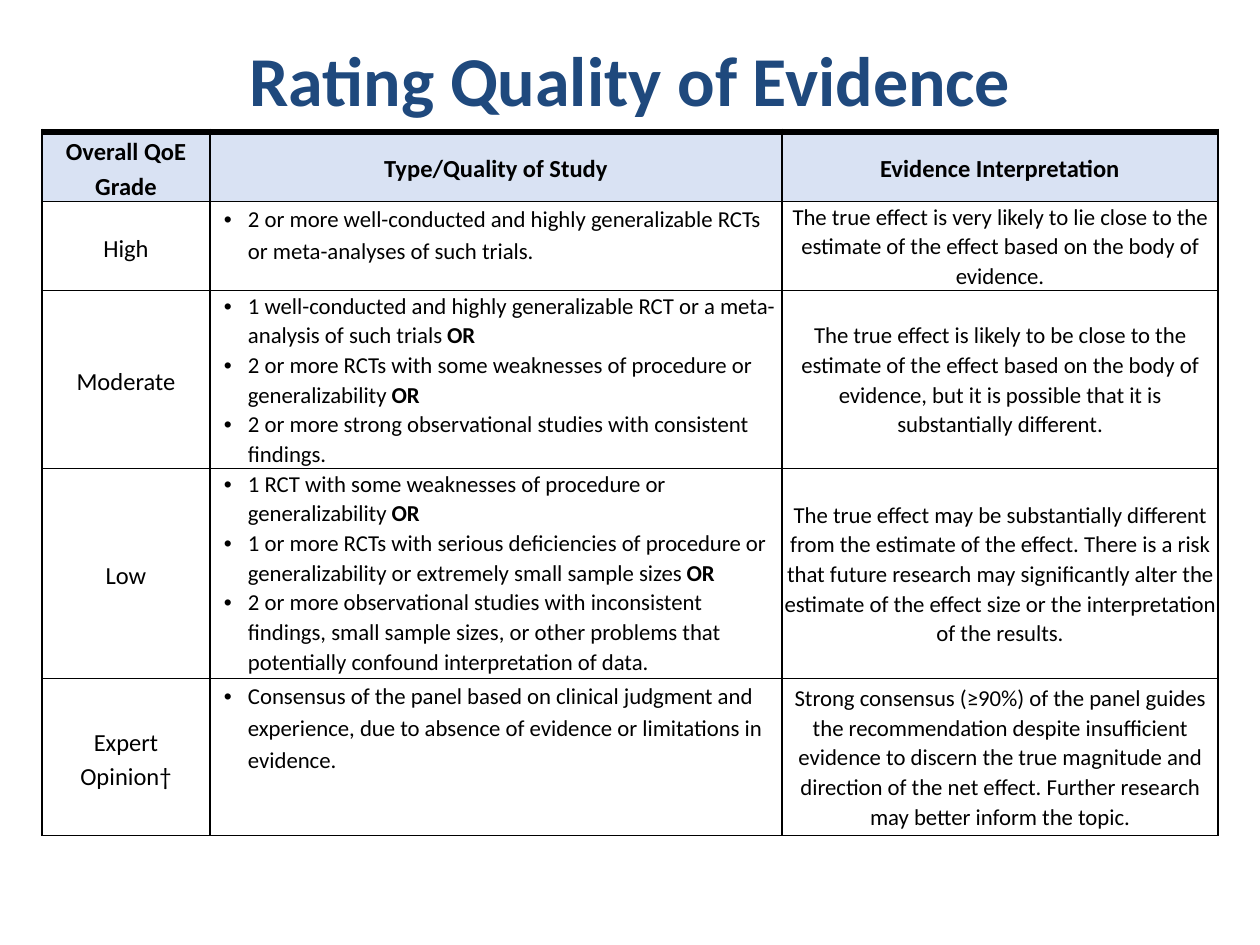
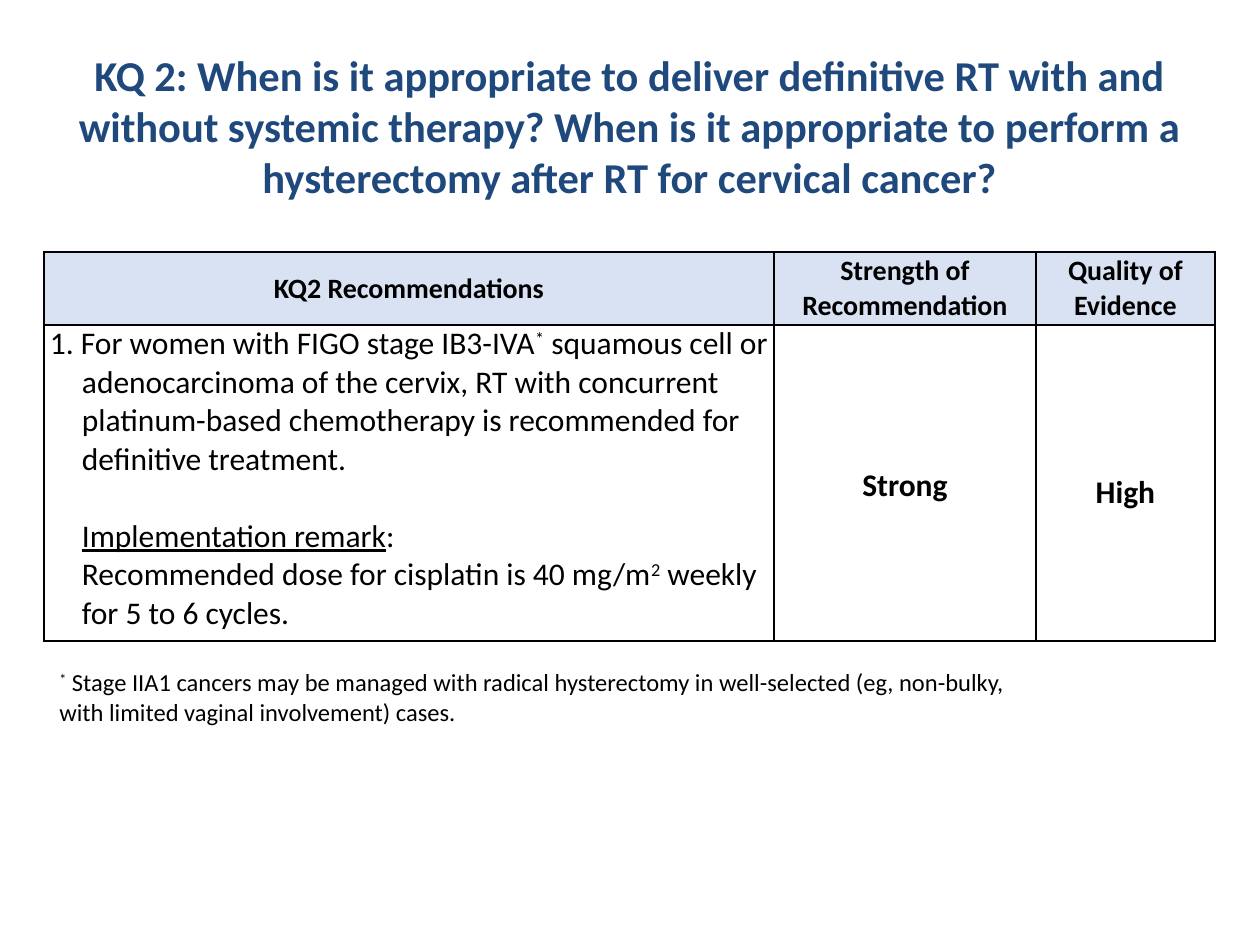
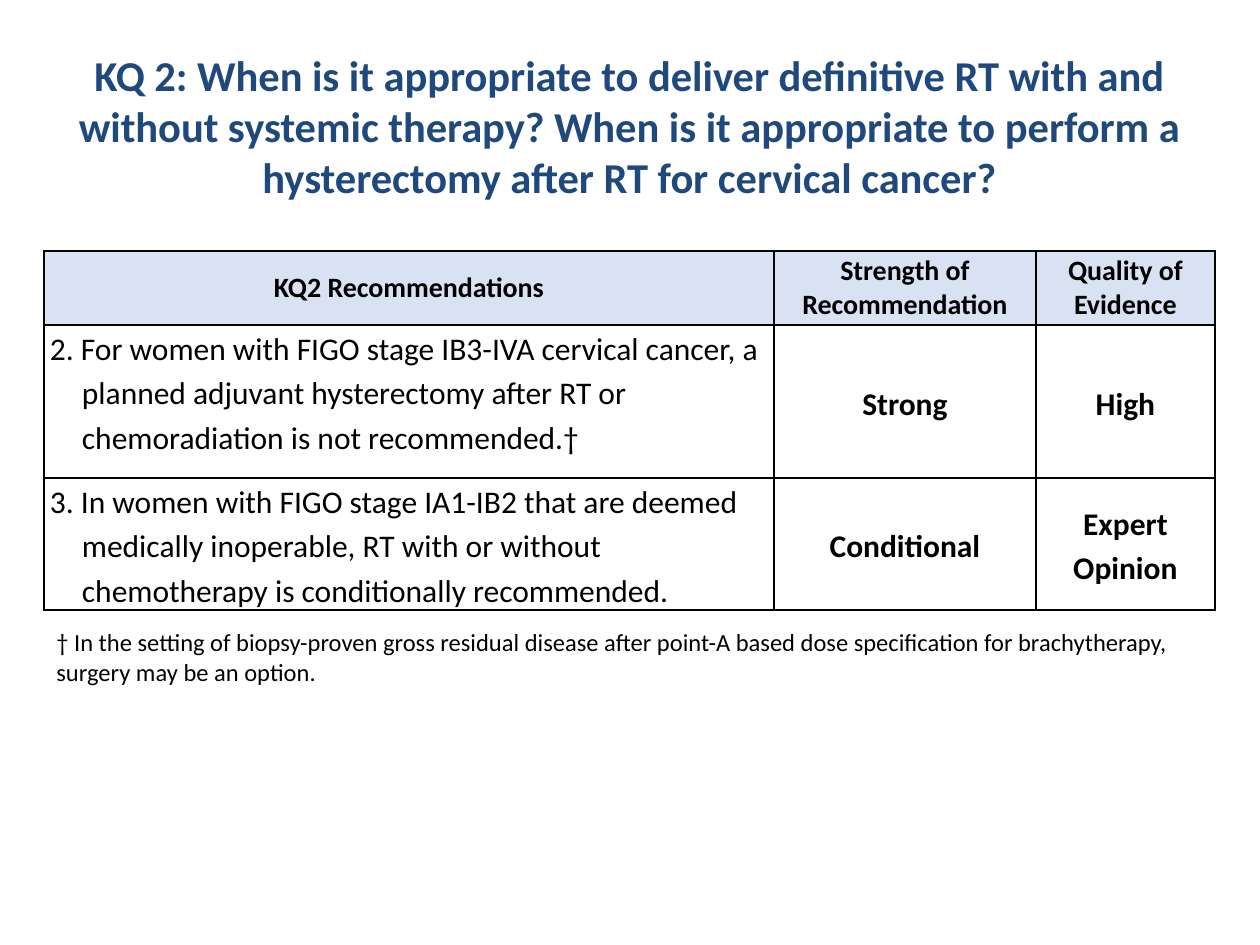
import pptx
import pptx.dml.color
import pptx.enum.text
import pptx.oxml
import pptx.oxml.ns
import pptx.util

PX = 914400 // 126
FONT = "Calibri"
NAVY, BLACK, WHITE, HEADER_BLUE = "1F497D", "000000", "FFFFFF", "D9E2F3"
CENTER = pptx.enum.text.PP_ALIGN.CENTER
TOP = pptx.enum.text.MSO_ANCHOR.TOP
MIDDLE = pptx.enum.text.MSO_ANCHOR.MIDDLE
FIT_TEXT = pptx.enum.text.MSO_AUTO_SIZE.SHAPE_TO_FIT_TEXT

BOLD, UNDERLINE, SUPERSCRIPT = {"bold": True}, {"underline": True}, {"baseline": 30000}
OR = ("OR", BOLD)

# Paragraph formats
CENTERED = {"alignment": CENTER}
LOOSE = {"alignment": CENTER, "line_spacing": 1.15}
SNUG = {"alignment": CENTER, "line_spacing": 1.07}
WIDE = {"alignment": CENTER, "line_spacing": 1.5}
BULLET = {"marL": 38, "indent": -24, "bullet": "•"}
LOOSE_BULLET = {**BULLET, "line_spacing": 1.15}
SNUG_BULLET = {**BULLET, "line_spacing": 1.07}
NUMBERED = {"marL": 32, "indent": -32}
LOOSE_NUMBERED = {**NUMBERED, "line_spacing": 1.15}
REMARK = {"marL": 32}
REMARK_HEADING = {**REMARK, "space_before": pptx.util.Pt(22)}
NOTE = {"space_after": pptx.util.Pt(6)}

# Cell styles; insets run left, top, right, bottom
NO_INSET, GRADE_INSET, HEADER_INSET, KQ_INSET = (0, 0, 0, 0), (9, 1, 9, 0), (9, 0, 9, 0), (6, 0, 6, 0)
GRADE_HEADER = {"size": 14, "bold": True, "fill": HEADER_BLUE, "inset": GRADE_INSET, "top_line": 4.5}
STUDY_HEADER = {**GRADE_HEADER, "inset": NO_INSET}
GRADE = {"size": 14, "inset": GRADE_INSET}
STUDY = {"size": 13, "inset": NO_INSET, "anchor": TOP}
INTERPRETATION = {"size": 13, "inset": NO_INSET}
KQ_HEADER = {"size": 16, "bold": True, "fill": HEADER_BLUE, "inset": HEADER_INSET}
RECOMMENDATION = {"size": 18, "inset": KQ_INSET, "anchor": TOP}
RATING = {"size": 18, "bold": True, "inset": KQ_INSET}

KQ_TITLE = ("KQ 2: When is it appropriate to deliver definitive RT with and without systemic "
            "therapy? When is it appropriate to perform a hysterectomy after RT for cervical cancer?")
KQ_COLUMNS = [730, 262, 179]
KQ_HEADINGS = ["KQ2 Recommendations", "Strength of Recommendation", "Quality of Evidence"]

QUALITY_ROWS = [
    ("High", LOOSE_BULLET,
     [["2 or more well-conducted and highly generalizable RCTs or meta-analyses of such trials."]],
     "The true effect is very likely to lie close to the estimate of the effect based on the "
     "body of evidence."),
    ("Moderate", SNUG_BULLET,
     [["1 well-conducted and highly generalizable RCT or a meta-analysis of such trials ", OR],
      ["2 or more RCTs with some weaknesses of procedure or generalizability ", OR],
      ["2 or more strong observational studies with consistent findings."]],
     "The true effect is likely to be close to the estimate of the effect based on the body of "
     "evidence, but it is possible that it is substantially different."),
    ("Low", SNUG_BULLET,
     [["1 RCT with some weaknesses of procedure or generalizability ", OR],
      ["1 or more RCTs with serious deficiencies of procedure or generalizability or extremely "
       "small sample sizes ", OR],
      ["2 or more observational studies with inconsistent findings, small sample sizes, or other "
       "problems that potentially confound interpretation of data."]],
     "The true effect may be substantially different from the estimate of the effect. There is a "
     "risk that future research may significantly alter the estimate of the effect size or the "
     "interpretation of the results."),
    ("Expert Opinion†", LOOSE_BULLET,
     [["Consensus of the panel based on clinical judgment and experience, due to absence of "
       "evidence or limitations in evidence."]],
     "Strong consensus (≥90%) of the panel guides the recommendation despite insufficient "
     "evidence to discern the true magnitude and direction of the net effect. Further research "
     "may better inform the topic."),
]


def px(length):
    return pptx.util.Emu(length * PX)


def color(hex_string):
    return pptx.dml.color.RGBColor.from_string(hex_string)


def append_xml(parent, tag, body=""):
    """Append an element given as its tag with attributes and its inner XML."""
    name = tag.split()[0]
    parent.append(pptx.oxml.parse_xml(
        f'<a:{tag} {pptx.oxml.ns.nsdecls("a")}>{body}</a:{name}>'))


def format_paragraph(para, style):
    properties = para._p.get_or_add_pPr()
    for name, value in style.items():
        if name in ("marL", "indent"):
            properties.set(name, str(px(value)))
        elif name == "bullet":
            append_xml(properties, 'buFont typeface="Arial"')
            append_xml(properties, f'buChar char="{value}"')
        else:
            setattr(para, name, value)


def add_span(para, text, size, style, hex_string):
    span = para.add_run()
    span.text = text
    span.font.color.rgb = color(hex_string)
    for name, value in {"name": FONT, "size": pptx.util.Pt(size), **style}.items():
        if name == "baseline":
            span._r.get_or_add_rPr().set(name, str(value))
        else:
            setattr(span.font, name, value)


def write(frame, paragraphs, size, bold=False, hex_string=BLACK):
    """Fill a frame with (paragraph format, spans); a span is a text or (text, format)."""
    frame.word_wrap = True
    for index, (style, spans) in enumerate(paragraphs):
        para = frame.add_paragraph() if index else frame.paragraphs[0]
        format_paragraph(para, style)
        for span in spans:
            text, extra = (span, {}) if isinstance(span, str) else span
            add_span(para, text, size, {"bold": bold, **extra}, hex_string)


def add_text(page, bounds, paragraphs, size, **look):
    box = page.shapes.add_textbox(*map(px, bounds))
    write(box.text_frame, paragraphs, size, **look)
    return box


def add_title(page, bounds, text, size):
    add_text(page, bounds, [(CENTERED, [text])], size, bold=True, hex_string=NAVY)


def add_note(page, bounds, spans):
    box = add_text(page, bounds, [(NOTE, spans)], 14)
    box.text_frame.auto_size = FIT_TEXT


def set_borders(cell, top_line):
    for side in "LRTB":
        width = pptx.util.Pt(top_line if side == "T" else 1)
        append_xml(cell._tc.get_or_add_tcPr(), f'ln{side} w="{width}"',
                   f'<a:solidFill><a:srgbClr val="{BLACK}"/></a:solidFill>')


def fill_cell(cell, style, paragraphs):
    sides = ("margin_left", "margin_top", "margin_right", "margin_bottom")
    for side, inset in zip(sides, style["inset"]):
        setattr(cell, side, px(inset))
    cell.vertical_anchor = style.get("anchor", MIDDLE)
    set_borders(cell, style.get("top_line", 1))
    cell.fill.solid()
    cell.fill.fore_color.rgb = color(style.get("fill", WHITE))
    write(cell.text_frame, paragraphs, style["size"], style.get("bold", False))


def add_grid(page, left, top, columns, heights, rows):
    """Add a table whose rows hold (cell style, paragraphs) pairs."""
    frame = page.shapes.add_table(len(rows), len(columns), px(left), px(top),
                                  px(sum(columns)), px(sum(heights)))
    table = frame.table
    table.first_row = table.horz_banding = False
    for column, width in zip(table.columns, columns):
        column.width = px(width)
    for row, height, contents in zip(table.rows, heights, rows):
        row.height = px(height)
        for cell, (style, paragraphs) in zip(row.cells, contents):
            fill_cell(cell, style, paragraphs)


def rating(text, spacing=LOOSE):
    return RATING, [(spacing, [text])]


def add_quality_page(page):
    headings = [(GRADE_HEADER, "Overall QoE Grade"), (STUDY_HEADER, "Type/Quality of Study"),
                (STUDY_HEADER, "Evidence Interpretation")]
    rows = [[(style, [(LOOSE, [text])]) for style, text in headings]]
    for grade, bullet, studies, meaning in QUALITY_ROWS:
        rows.append([(GRADE, [(LOOSE, [grade])]),
                     (STUDY, [(bullet, spans) for spans in studies]),
                     (INTERPRETATION, [(SNUG, [meaning])])])
    add_grid(page, 42, 132, [168, 572, 436], [66, 84, 170, 210, 157], rows)
    add_title(page, (63, 30, 1134, 157), "Rating Quality of Evidence", 40)


def add_kq_page(page, top, heights, rows, note_bounds, note):
    add_title(page, (15, 43, 1229, 209), KQ_TITLE, 24.3)
    header = [(KQ_HEADER, [(CENTERED, [text])]) for text in KQ_HEADINGS]
    add_grid(page, 44, top, KQ_COLUMNS, heights, [header, *rows])
    add_note(page, note_bounds, note)


def main():
    deck = pptx.Presentation()
    deck.slide_width, deck.slide_height = px(1260), px(945)
    quality, chemoradiation, surgery = [
        deck.slides.add_slide(deck.slide_layouts[6]) for _ in range(3)]

    add_quality_page(quality)

    definitive = [
        (NUMBERED, ["1. For women with FIGO stage IB3-IVA", ("*", SUPERSCRIPT),
                    " squamous cell or adenocarcinoma of the cervix, RT with concurrent "
                    "platinum-based chemotherapy is recommended for definitive treatment."]),
        (REMARK_HEADING, [("Implementation remark", UNDERLINE), ":"]),
        (REMARK, ["Recommended dose for cisplatin is 40 mg/m", ("2", SUPERSCRIPT),
                  " weekly for 5 to 6 cycles."]),
    ]
    add_kq_page(chemoradiation, 252, [73, 316],
                [[(RECOMMENDATION, definitive), rating("Strong"), rating("High", WIDE)]],
                (47, 661, 984, 72),
                [("*", SUPERSCRIPT),
                 " Stage IIA1 cancers may be managed with radical hysterectomy in well-selected "
                 "(eg, non-bulky, with limited vaginal involvement) cases."])

    recommendations = [
        ("2. For women with FIGO stage IB3-IVA cervical cancer, a planned adjuvant hysterectomy "
         "after RT or chemoradiation is not recommended.†", "Strong", "High"),
        ("3. In women with FIGO stage IA1-IB2 that are deemed medically inoperable, RT with or "
         "without chemotherapy is conditionally recommended.", "Conditional", "Expert Opinion"),
    ]
    add_kq_page(surgery, 251, [74, 153, 132],
                [[(RECOMMENDATION, [(LOOSE_NUMBERED, [text])]), rating(strength), rating(evidence)]
                 for text, strength, evidence in recommendations],
                (44, 621, 1171, 72),
                ["† In the setting of biopsy-proven gross residual disease after point-A based "
                 "dose specification for brachytherapy, surgery may be an option."])

    deck.save("out.pptx")


if __name__ == "__main__":
    main()
